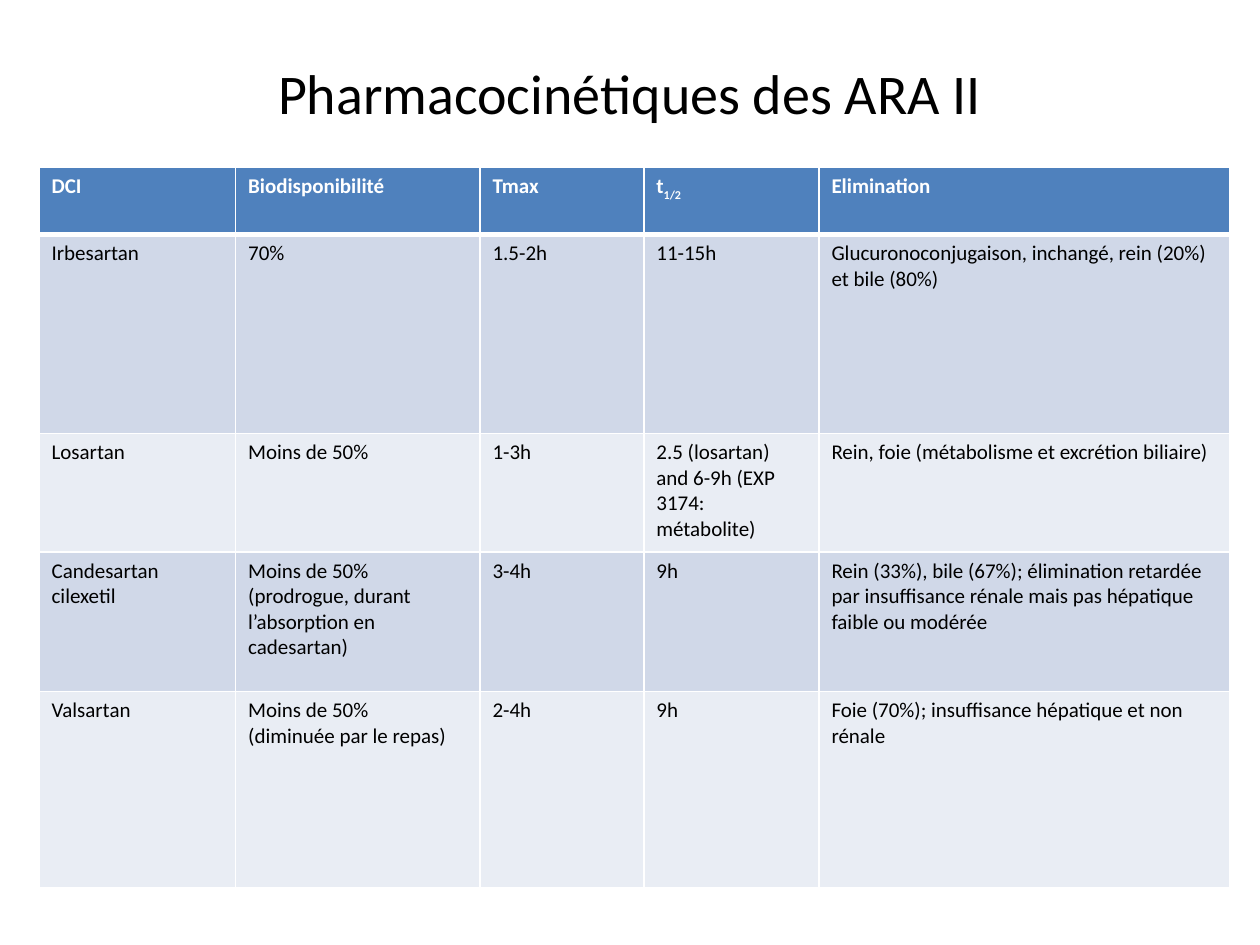
from lxml import etree
from pptx import Presentation
from pptx.dml.color import RGBColor
from pptx.enum import text
from pptx.oxml import ns
from pptx.util import Inches, Pt

FONT = "Calibri"
COLORS = {
    "ink": "000000",
    "paper": "FFFFFF",
    "header": "4F81BD",
    "odd": "D0D8E8",
    "even": "E9EDF4",
}
COLUMN_WIDTHS = [1.56, 1.94, 1.3, 1.39, 3.26]
ROW_HEIGHTS = [0.53, 1.58, 0.94, 1.11, 1.56]
SUBSCRIPTS = {"t": "1/2"}
DRUGS = [
    ["DCI", "Biodisponibilité", "Tmax", "t", "Elimination"],
    ["Irbesartan", "70%", "1.5-2h", "11-15h",
     "Glucuronoconjugaison, inchangé, rein (20%) et bile (80%)"],
    ["Losartan", "Moins de 50%", "1-3h",
     "2.5 (losartan) and 6-9h (EXP 3174: métabolite)",
     "Rein, foie (métabolisme et excrétion biliaire)"],
    ["Candesartan cilexetil",
     "Moins de 50%\n(prodrogue, durant l’absorption en cadesartan)",
     "3-4h", "9h",
     "Rein (33%), bile (67%); élimination retardée par insuffisance rénale "
     "mais pas hépatique faible ou modérée"],
    ["Valsartan", "Moins de 50%\n(diminuée par le repas)", "2-4h", "9h",
     "Foie (70%); insuffisance hépatique et non rénale"],
]


def color(name):
    return RGBColor.from_string(COLORS[name])


def set_font(paragraph, size, ink, bold=False):
    font = paragraph.font
    font.name, font.size, font.bold = FONT, Pt(size), bold
    font.color.rgb = color(ink)


def add_title(slide, wording):
    title = slide.shapes.add_textbox(Inches(0.5), Inches(0.3), Inches(9), Inches(0.87))
    frame = title.text_frame
    frame.word_wrap = True
    frame.vertical_anchor = text.MSO_ANCHOR.MIDDLE
    frame.text = wording
    heading = frame.paragraphs[0]
    heading.alignment = text.PP_ALIGN.CENTER
    set_font(heading, 32, "ink")


def set_borders(cell, **widths):
    """Draw white borders; widths are in points, keyed L, R, T and B."""
    properties = cell._tc.get_or_add_tcPr()
    for side, width in widths.items():
        line = etree.SubElement(properties, ns.qn(f"a:ln{side}"), w=str(Pt(width)))
        fill = etree.SubElement(line, ns.qn("a:solidFill"))
        etree.SubElement(fill, ns.qn("a:srgbClr"), val=COLORS["paper"])


def fill_cell(cell, wording, row):
    is_header = row == 0
    set_borders(cell, L=1, R=1, T=3 if row == 1 else 1, B=3 if is_header else 1)
    cell.fill.solid()
    cell.fill.fore_color.rgb = color(
        "header" if is_header else "odd" if row % 2 else "even")
    cell.text = wording
    if wording in SUBSCRIPTS:
        subscript = cell.text_frame.paragraphs[0].add_run()
        subscript.text = SUBSCRIPTS[wording]
        subscript._r.get_or_add_rPr().set("baseline", "-25000")
    for paragraph in cell.text_frame.paragraphs:
        set_font(paragraph, 12, "paper" if is_header else "ink", is_header)


def add_drug_table(slide):
    table = slide.shapes.add_table(
        len(ROW_HEIGHTS), len(COLUMN_WIDTHS), Inches(0.31), Inches(1.33),
        Inches(sum(COLUMN_WIDTHS)), Inches(sum(ROW_HEIGHTS))).table
    for column, width in zip(table.columns, COLUMN_WIDTHS):
        column.width = Inches(width)
    for row, height in zip(table.rows, ROW_HEIGHTS):
        row.height = Inches(height)
    for r, drug in enumerate(DRUGS):
        for c, wording in enumerate(drug):
            fill_cell(table.cell(r, c), wording, r)


def main():
    deck = Presentation()
    deck.slide_width, deck.slide_height = Inches(10), Inches(7.5)
    slide = deck.slides.add_slide(deck.slide_layouts[6])
    add_title(slide, "Pharmacocinétiques des ARA II")
    add_drug_table(slide)
    deck.save("out.pptx")


if __name__ == "__main__":
    main()
